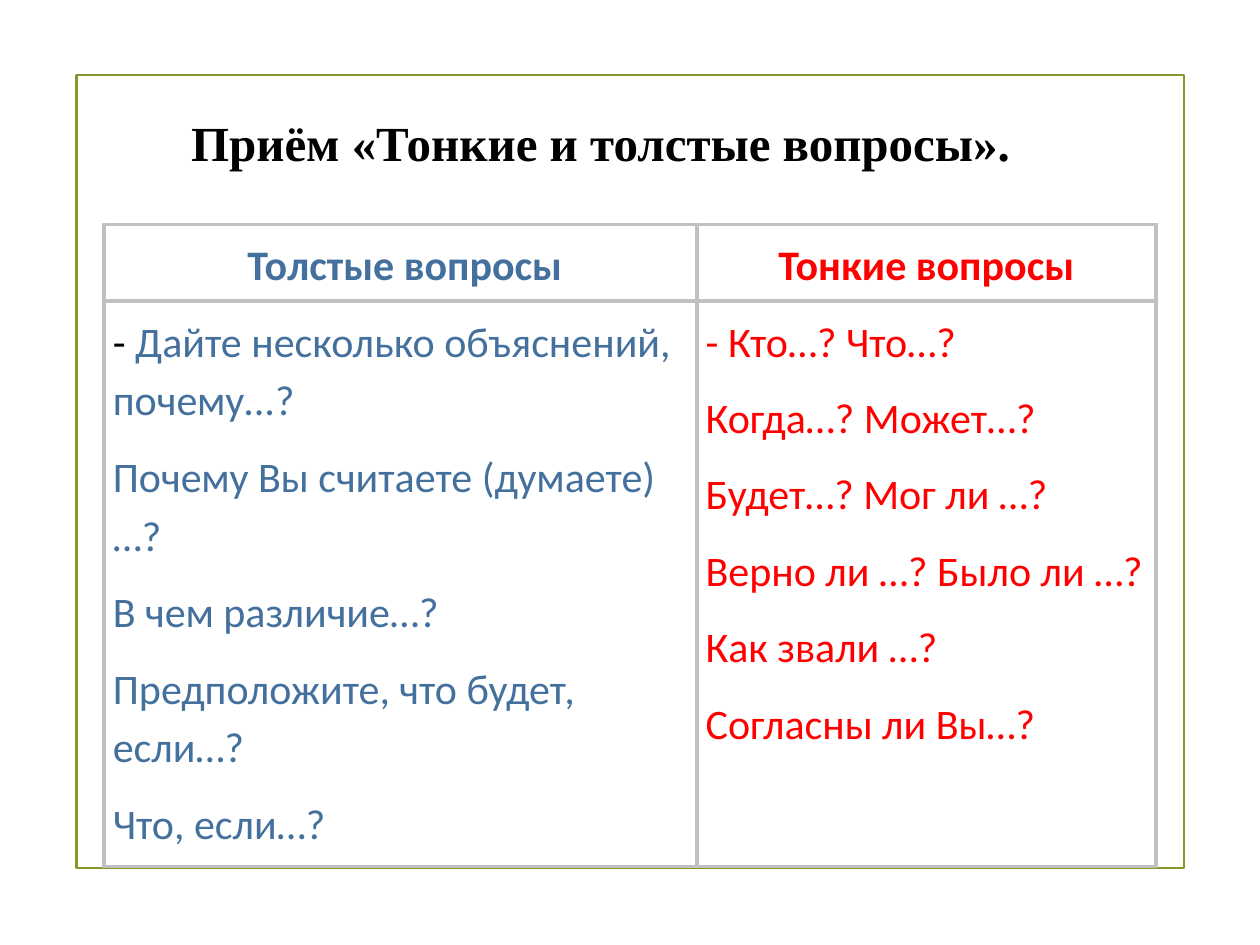
from dataclasses import dataclass
from lxml import etree
from pptx import Presentation
from pptx.dml.color import RGBColor
from pptx.enum import shapes, text
from pptx.oxml.ns import qn
from pptx.util import Pt


@dataclass(frozen=True)
class Theme:
    black: str = "000000"
    blue: str = "44709D"
    red: str = "FF0000"
    green: str = "83992A"
    grey: str = "C0C0C0"
    white: str = "FFFFFF"
    serif: str = "Times New Roman"
    sans: str = "Calibri"
    head: int = 28
    body: int = 24


def put(item, vals):
    for key, val in vals.items():
        setattr(item, key, val)


class Deck:
    def __init__(self, theme):
        self.theme = theme
        self.prs = Presentation()
        put(self.prs, {"slide_width": Pt(720), "slide_height": Pt(540)})
        self.slide = self.prs.slides.add_slide(self.prs.slide_layouts[5])

    def run(self, para, words, color, font, size, bold=False):
        run = para.add_run()
        run.text = words
        put(run.font, {"name": font, "size": Pt(size), "bold": bold})
        run.font.color.rgb = RGBColor.from_string(color)

    def frame(self, *box):
        rect = self.slide.shapes.add_shape(
            shapes.MSO_SHAPE.RECTANGLE, *map(Pt, box))
        rect.shadow.inherit = False
        rect.fill.background()
        rect.line.color.rgb = RGBColor.from_string(self.theme.green)
        rect.line.width = Pt(1.25)

    def title(self, words, *box):
        shape = self.slide.shapes.title
        put(shape, dict(zip(("left", "top", "width", "height"), map(Pt, box))))
        put(shape.text_frame, {"word_wrap": True,
                               "vertical_anchor": text.MSO_ANCHOR.TOP})
        para = shape.text_frame.paragraphs[0]
        para.alignment = text.PP_ALIGN.LEFT
        self.run(para, words, self.theme.black, self.theme.serif,
                 self.theme.head, True)

    def edge(self, cell):
        """Draw all four borders of a cell."""
        props = cell._tc.get_or_add_tcPr()
        for spot, side in enumerate(("lnL", "lnR", "lnT", "lnB")):
            line = etree.Element(qn("a:" + side), w=str(Pt(2.25)))
            fill = etree.SubElement(line, qn("a:solidFill"))
            etree.SubElement(fill, qn("a:srgbClr"), val=self.theme.grey)
            props.insert(spot, line)

    def cell(self, cell, paras, right, head):
        """Fill a cell; each paragraph is a list of (words, color) runs."""
        cell.fill.solid()
        cell.fill.fore_color.rgb = RGBColor.from_string(self.theme.white)
        put(cell, {"margin_left": Pt(5), "margin_right": Pt(right),
                   "margin_top": Pt(5), "margin_bottom": Pt(5)})
        self.edge(cell)
        frame = cell.text_frame
        align = text.PP_ALIGN.CENTER if head else text.PP_ALIGN.LEFT
        for num, runs in enumerate(paras):
            para = frame.add_paragraph() if num else frame.paragraphs[0]
            put(para, {"alignment": align, "line_spacing": 1.15,
                       "space_after": Pt(10)})
            for words, color in runs:
                self.run(para, words, color, self.theme.sans,
                         self.theme.body, head)

    def table(self, rows, left, top, wide, high):
        grid = self.slide.shapes.add_table(
            len(rows), len(wide), Pt(left), Pt(top),
            Pt(sum(wide)), Pt(sum(high))).table
        put(grid, {"first_row": False, "horz_banding": False})
        for col, size in zip(grid.columns, wide):
            col.width = Pt(size)
        for row, size in zip(grid.rows, high):
            row.height = Pt(size)
        for r, row in enumerate(rows):
            for c, paras in enumerate(row):
                self.cell(grid.cell(r, c), paras, 5 * c, r == 0)


def main():
    theme = Theme()
    deck = Deck(theme)
    thick = ["Почему Вы считаете (думаете) …?", "В чем различие…?",
             "Предположите, что будет, если…?", "Что, если…?"]
    thin = ["- Кто…? Что…?", "Когда…? Может…?", "Будет…? Мог ли …?",
            "Верно ли …? Было ли …?", "Как звали …?", "Согласны ли Вы…?"]
    first = [("- ", theme.black),
             ("Дайте несколько объяснений, почему...?", theme.blue)]
    rows = [
        [[[("Толстые вопросы", theme.blue)]],
         [[("Тонкие вопросы", theme.red)]]],
        [[first] + [[(words, theme.blue)] for words in thick],
         [[(words, theme.red)] for words in thin]],
    ]
    deck.frame(43.75, 42.75, 633, 453.5)
    deck.title("Приём «Тонкие и толстые вопросы».", 102, 60.5, 499, 41)
    deck.table(rows, 59.5, 128.25, (338.75, 262.25), (42.75, 323.25))
    deck.prs.save("out.pptx")


if __name__ == "__main__":
    main()
